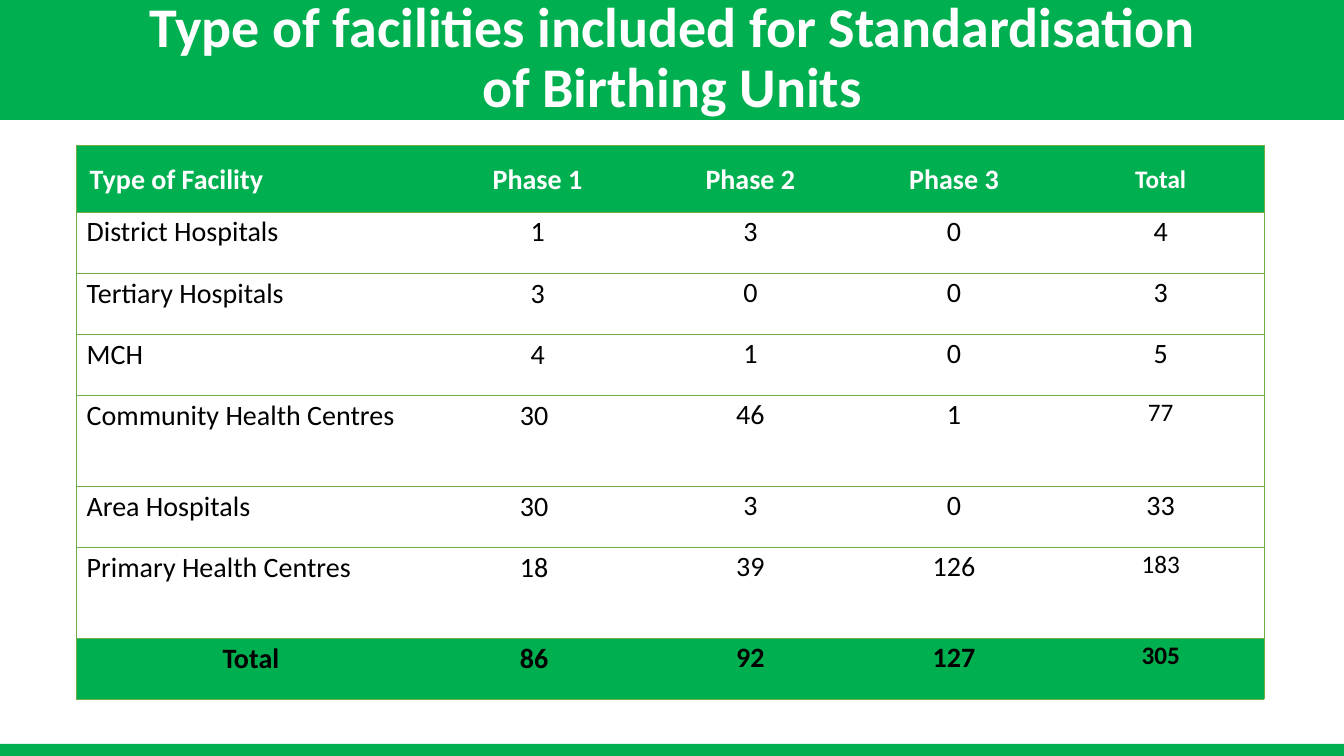
from dataclasses import dataclass

from lxml import etree
from pptx import Presentation
from pptx.dml.color import RGBColor
from pptx.enum import shapes, text
from pptx.oxml import ns
from pptx.util import Pt


@dataclass(frozen=True)
class Theme:
    """Colours, font and type sizes of the slide."""
    font: str = "Calibri"
    green: str = "00B050"
    rule: str = "70AD47"
    white: str = "FFFFFF"
    black: str = "000000"
    title: int = 40
    body: int = 20
    small: int = 18


THEME = Theme()
PLAIN_STYLE = "{2D5ABB26-0587-4C30-8999-92F81FD0307C}"
TITLE = "Type of facilities included for Standardisation\vof Birthing Units"
ROWS = [
    ["Type of Facility", "Phase 1", "Phase 2", "Phase 3", "Total"],
    ["District Hospitals", "1", "3", "0", "4"],
    ["Tertiary Hospitals", "3", "0", "0", "3"],
    ["MCH", "4", "1", "0", "5"],
    ["Community Health Centres", "30", "46", "1", "77"],
    ["Area Hospitals", "30", "3", "0", "33"],
    ["Primary Health Centres", "18", "39", "126", "183"],
    ["Total", "86", "92", "127", "305"],
]
WIDTHS = [249, 160.6, 143.4, 147.6, 147.6]
HEIGHTS = [47.5, 43.7, 43.7, 43.7, 64.8, 43.7, 64.8, 43.7]
SMALL_TOTALS = {0, 4, 6, 7}


def format_paragraph(p, size, color, bold, align, spacing):
    """Format a paragraph and all its runs."""
    p.alignment = align
    p.line_spacing = spacing
    for r in p.runs:
        r.font.name = THEME.font
        r.font.size = Pt(size)
        r.font.bold = bold
        r.font.color.rgb = RGBColor.from_string(color)


def add_bar(s, top, height):
    """Add a full-width green bar."""
    sp = s.shapes.add_shape(shapes.MSO_SHAPE.RECTANGLE, 0, Pt(top), Pt(960), Pt(height))
    sp.shadow.inherit = False
    sp.fill.solid()
    sp.fill.fore_color.rgb = RGBColor.from_string(THEME.green)
    sp.line.fill.background()


def set_title(s, wording):
    """Place the title placeholder in front of the header bar."""
    sp = s.shapes.title
    sp.left, sp.top, sp.width, sp.height = 0, 0, Pt(960), Pt(85)
    s.shapes._spTree.append(sp._element)
    tf = sp.text_frame
    tf.auto_size = text.MSO_AUTO_SIZE.NONE
    tf.vertical_anchor = text.MSO_ANCHOR.MIDDLE
    p = tf.paragraphs[0]
    p.text = wording
    format_paragraph(p, THEME.title, THEME.white, True, text.PP_ALIGN.CENTER, 0.9)


def set_borders(cell, sides):
    """Rule the named sides of a cell and clear the others."""
    tcPr = cell._tc.get_or_add_tcPr()
    for i, side in enumerate("LRTB"):
        ln = etree.Element(ns.qn(f"a:ln{side}"), w=str(Pt(0.5)))
        if side in sides:
            fill = etree.SubElement(ln, ns.qn("a:solidFill"))
            etree.SubElement(fill, ns.qn("a:srgbClr"), val=THEME.rule)
        else:
            etree.SubElement(ln, ns.qn("a:noFill"))
        tcPr.insert(i, ln)


def set_margins(cell, i, j):
    """Set cell insets, wider in the first two columns."""
    if j > 1:
        left = top = right = bottom = 0
    elif i == 0:
        left = right = 9.4
        top = bottom = 3.6
    else:
        left, top, right, bottom = 7.2, 0.7, 7.2, 0
        if j == 1:
            right += 5 * (len(cell.text) - 1)
    cell.margin_left, cell.margin_right = Pt(left), Pt(right)
    cell.margin_top, cell.margin_bottom = Pt(top), Pt(bottom)


def fill_cell(cell, i, j, wording):
    """Write and format the cell at row i, column j."""
    head, total = i == 0, i == len(ROWS) - 1
    last = j == len(WIDTHS) - 1
    p = cell.text_frame.paragraphs[0]
    p.text = wording
    format_paragraph(
        p,
        THEME.small if last and i in SMALL_TOTALS else THEME.body,
        THEME.white if head else THEME.black,
        head or total,
        text.PP_ALIGN.LEFT if j == 0 and not total else text.PP_ALIGN.CENTER,
        1.07,
    )
    cell.vertical_anchor = text.MSO_ANCHOR.MIDDLE if head else text.MSO_ANCHOR.TOP
    set_margins(cell, i, j)
    if head or total:
        cell.fill.solid()
        cell.fill.fore_color.rgb = RGBColor.from_string(THEME.green)
    else:
        cell.fill.background()
    set_borders(cell, "TB" + "L" * (j == 0) + "R" * last)


def add_facility_table(s):
    """Add the table of facilities by phase."""
    frame = s.shapes.add_table(len(ROWS), len(WIDTHS), Pt(54.7), Pt(103.9),
                               Pt(sum(WIDTHS)), Pt(sum(HEIGHTS)))
    table = frame.table
    table.horz_banding = False
    table._tbl.tblPr.find(ns.qn("a:tableStyleId")).text = PLAIN_STYLE
    for column, width in zip(table.columns, WIDTHS):
        column.width = Pt(width)
    for i, (row, height) in enumerate(zip(ROWS, HEIGHTS)):
        table.rows[i].height = Pt(height)
        for j, wording in enumerate(row):
            fill_cell(table.cell(i, j), i, j, wording)


def main():
    """Build and save the slide."""
    prs = Presentation()
    prs.slide_width, prs.slide_height = Pt(960), Pt(540)
    s = prs.slides.add_slide(prs.slide_layouts[5])
    add_bar(s, 0, 85.6)
    add_bar(s, 531.3, 8.7)
    set_title(s, TITLE)
    add_facility_table(s)
    prs.save("out.pptx")


if __name__ == "__main__":
    main()
